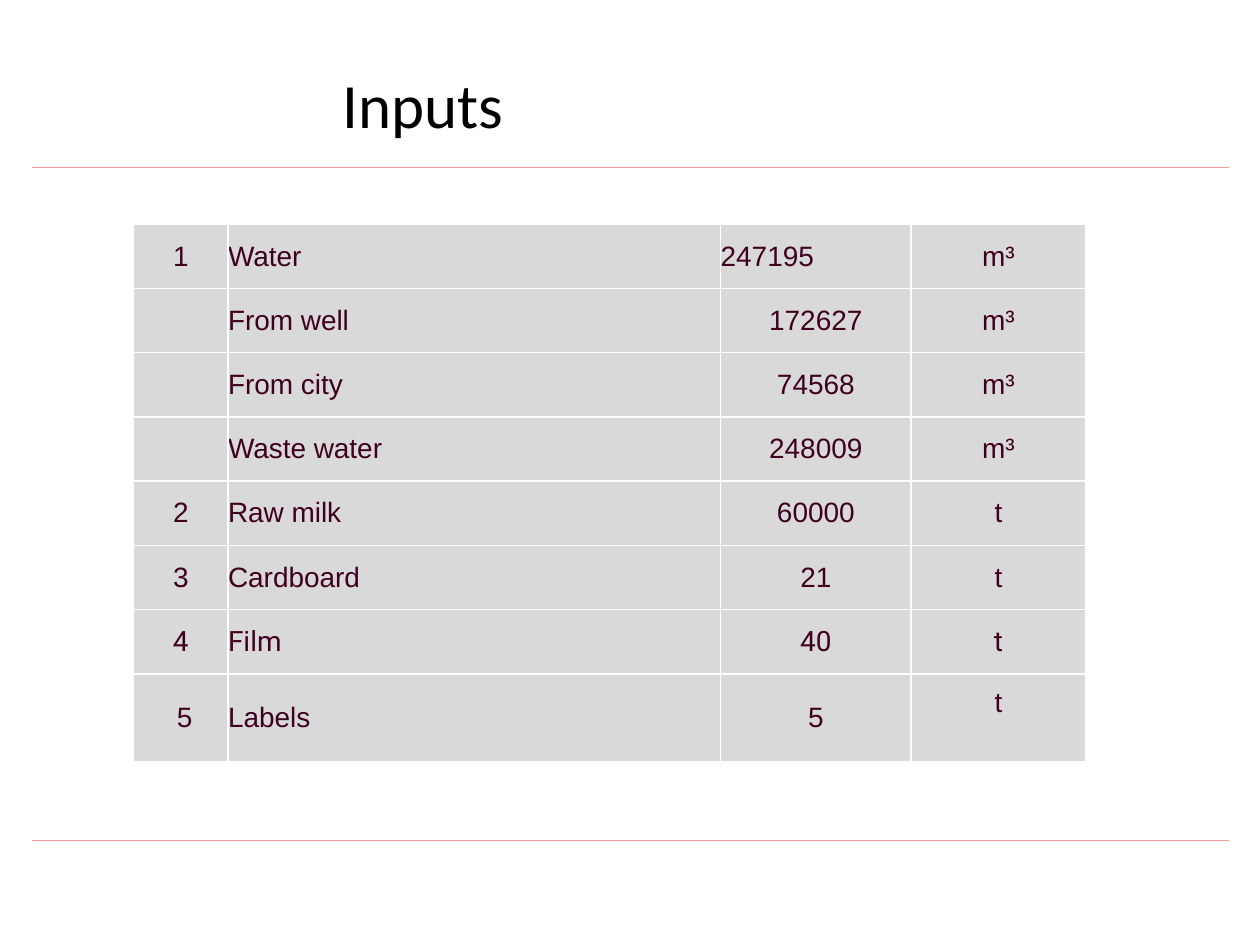
from lxml.etree import SubElement
from pptx import Presentation
from pptx.dml.color import RGBColor
from pptx.enum.shapes import MSO_CONNECTOR
from pptx.enum.text import MSO_ANCHOR as Anchor, PP_ALIGN as Align
from pptx.oxml.ns import qn
from pptx.util import Inches, Pt

TITLE = "Inputs"
INPUTS = [
    ("1", "Water", "247195", "m³"),
    ("", "From well", "172627", "m³"),
    ("", "From city", "74568", "m³"),
    ("", "Waste water", "248009", "m³"),
    ("2", "Raw milk", "60000", "t"),
    ("3", "Cardboard", "21", "t"),
    ("4", "Film", "40", "t"),
    (" 5", "Labels", "5", "t"),
]
COLUMN_WIDTHS = [0.75, 3.91, 1.51, 1.39]
COLUMN_ALIGNS = [Align.CENTER, Align.LEFT, Align.CENTER, Align.CENTER]
ROW_HEIGHTS = [0.51] * 7 + [0.7]
TOTAL_CELL = (0, 2)
RAISED_UNIT_CELL = (7, 3)
FILM_ROW = 6
RULE_TOPS = [1.33, 6.67]

THEME = {
    "title": {"name": "Calibri", "size": Pt(36), "color": "000000"},
    "cell": {"name": "Arial", "size": Pt(16), "color": "3F0020"},
    "film": {"name": "Roboto", "size": Pt(16), "color": "3F0020"},
    "cell_fill": "D9D9D9",
    "border": "FFFFFF",
    "rule": "FF9999",
    "line_width": Pt(1),
}
NO_MARGINS = dict.fromkeys(
    ("margin_left", "margin_top", "margin_right", "margin_bottom"), 0)


def apply(target, values):
    for key, value in values.items():
        setattr(target, key, value)


def write(frame, text, style, align):
    paragraph = frame.paragraphs[0]
    paragraph.alignment = align
    run = paragraph.add_run()
    run.text = text
    apply(run.font, {"name": style["name"], "size": style["size"]})
    run.font.color.rgb = RGBColor.from_string(style["color"])


def add_borders(cell):
    properties = cell._tc.get_or_add_tcPr()
    for side in ("a:lnL", "a:lnR", "a:lnT", "a:lnB"):
        border = SubElement(properties, qn(side), w=str(THEME["line_width"]))
        fill = SubElement(border, qn("a:solidFill"))
        SubElement(fill, qn("a:srgbClr"), val=THEME["border"])


def add_rule(slide, top):
    rule = slide.shapes.add_connector(
        MSO_CONNECTOR.STRAIGHT, Inches(0.25), Inches(top), Inches(9.75), Inches(top))
    rule.line.color.rgb = RGBColor.from_string(THEME["rule"])
    rule.line.width = THEME["line_width"]
    SubElement(rule._element.spPr, qn("a:effectLst"))


def add_title(slide):
    title = slide.shapes.add_textbox(Inches(2.72), Inches(0.48), Inches(7), Inches(0.68))
    apply(title.text_frame, {**NO_MARGINS, "word_wrap": True,
                             "vertical_anchor": Anchor.MIDDLE})
    write(title.text_frame, TITLE, THEME["title"], Align.LEFT)


def add_inputs(slide):
    table = slide.shapes.add_table(
        len(INPUTS), len(COLUMN_WIDTHS), Inches(1.06), Inches(1.78),
        Inches(sum(COLUMN_WIDTHS)), Inches(sum(ROW_HEIGHTS))).table
    apply(table, {"first_row": False, "horz_banding": False})
    for column, width in zip(table.columns, COLUMN_WIDTHS):
        column.width = Inches(width)
    for row, height in zip(table.rows, ROW_HEIGHTS):
        row.height = Inches(height)
    for r, values in enumerate(INPUTS):
        style = THEME["film" if r == FILM_ROW else "cell"]
        for c, (text, align) in enumerate(zip(values, COLUMN_ALIGNS)):
            cell = table.cell(r, c)
            apply(cell, {**NO_MARGINS, "vertical_anchor": Anchor.MIDDLE})
            add_borders(cell)
            cell.fill.solid()
            cell.fill.fore_color.rgb = RGBColor.from_string(THEME["cell_fill"])
            if text:
                write(cell.text_frame, text, style,
                      Align.LEFT if (r, c) == TOTAL_CELL else align)
    table.cell(*RAISED_UNIT_CELL).margin_bottom = Inches(0.24)


def main():
    deck = Presentation()
    apply(deck, {"slide_width": Inches(10), "slide_height": Inches(7.5)})
    slide = deck.slides.add_slide(deck.slide_layouts[6])
    for top in RULE_TOPS:
        add_rule(slide, top)
    add_title(slide)
    add_inputs(slide)
    deck.save("out.pptx")


if __name__ == "__main__":
    main()
